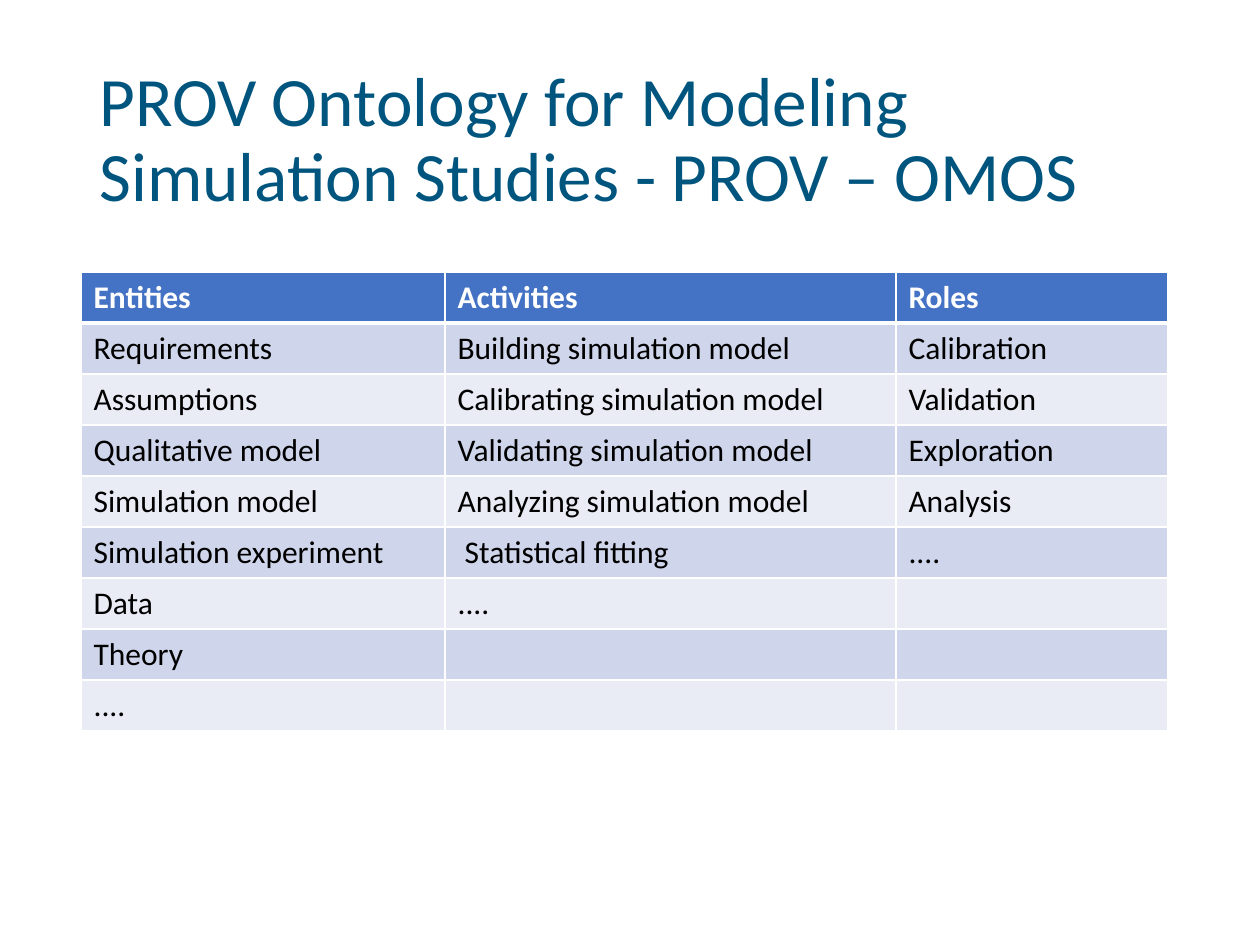
from dataclasses import dataclass

from lxml import etree
from pptx import Presentation
from pptx.dml.color import RGBColor
from pptx.enum.text import MSO_ANCHOR
from pptx.oxml.ns import qn
from pptx.util import Emu, Pt

MIDDLE = MSO_ANCHOR.MIDDLE
EMU_PER_PX = 914400 // 126
BLANK_LAYOUT = 6


@dataclass(frozen=True)
class Theme:
    font: str = "Calibri"
    title_size: float = 39.6
    table_size: float = 18
    title: str = "00557F"
    header: str = "4472C4"
    header_text: str = "FFFFFF"
    body_text: str = "000000"
    bands: tuple = ("CFD5EA", "E9EBF5")
    border: str = "FFFFFF"
    border_width: float = 1
    header_rule_width: float = 3


THEME = Theme()
TITLE = "PROV Ontology for Modeling Simulation Studies - PROV – OMOS"
COLUMN_WIDTHS = (364, 451, 272)
ROW_HEIGHT = 51
ROWS = (
    ("Entities", "Activities", "Roles"),
    ("Requirements", "Building simulation model", "Calibration"),
    ("Assumptions", "Calibrating simulation model", "Validation"),
    ("Qualitative model", "Validating simulation model", "Exploration"),
    ("Simulation model", "Analyzing simulation model", "Analysis"),
    ("Simulation experiment", " Statistical fitting", "...."),
    ("Data", "....", ""),
    ("Theory", "", ""),
    ("....", "", ""),
)


def px(length):
    return Emu(length * EMU_PER_PX)


def style_font(font, size, color, bold=False):
    font.name = THEME.font
    font.size = Pt(size)
    font.bold = bold
    font.color.rgb = RGBColor.from_string(color)


def set_borders(cell, top, bottom):
    """Draw all four cell edges; top and bottom are widths in points."""
    properties = cell._tc.get_or_add_tcPr()
    side = THEME.border_width
    for tag, width in (("lnL", side), ("lnR", side), ("lnT", top), ("lnB", bottom)):
        line = etree.SubElement(properties, qn(f"a:{tag}"), w=str(Pt(width)))
        fill = etree.SubElement(line, qn("a:solidFill"))
        etree.SubElement(fill, qn("a:srgbClr"), val=THEME.border)


def add_title(page, left, top, width, height):
    box = page.shapes.add_textbox(px(left), px(top), px(width), px(height))
    frame = box.text_frame
    frame.word_wrap = True
    frame.vertical_anchor = MIDDLE
    para = frame.paragraphs[0]
    para.text = TITLE
    para.line_spacing = 0.9
    style_font(para.font, THEME.title_size, THEME.title)


def fill_cell(cell, text, row_index):
    is_header = row_index == 0
    set_borders(
        cell,
        top=THEME.header_rule_width if row_index == 1 else THEME.border_width,
        bottom=THEME.header_rule_width if is_header else THEME.border_width,
    )
    background = THEME.header if is_header else THEME.bands[(row_index - 1) % 2]
    cell.fill.solid()
    cell.fill.fore_color.rgb = RGBColor.from_string(background)
    para = cell.text_frame.paragraphs[0]
    para.text = text
    color = THEME.header_text if is_header else THEME.body_text
    style_font(para.font, THEME.table_size, color, bold=is_header)


def add_concept_table(page, left, top):
    frame = page.shapes.add_table(
        len(ROWS), len(COLUMN_WIDTHS), px(left), px(top),
        px(sum(COLUMN_WIDTHS)), px(ROW_HEIGHT * len(ROWS)),
    )
    table = frame.table
    for column, width in zip(table.columns, COLUMN_WIDTHS):
        column.width = px(width)
    for row_index, texts in enumerate(ROWS):
        table.rows[row_index].height = px(ROW_HEIGHT)
        for column_index, text in enumerate(texts):
            fill_cell(table.cell(row_index, column_index), text, row_index)


def main():
    deck = Presentation()
    deck.slide_width, deck.slide_height = px(1260), px(945)
    page = deck.slides.add_slide(deck.slide_layouts[BLANK_LAYOUT])
    add_title(page, left=87, top=50, width=1086, height=183)
    add_concept_table(page, left=81, top=272)
    deck.save("out.pptx")


if __name__ == "__main__":
    main()
